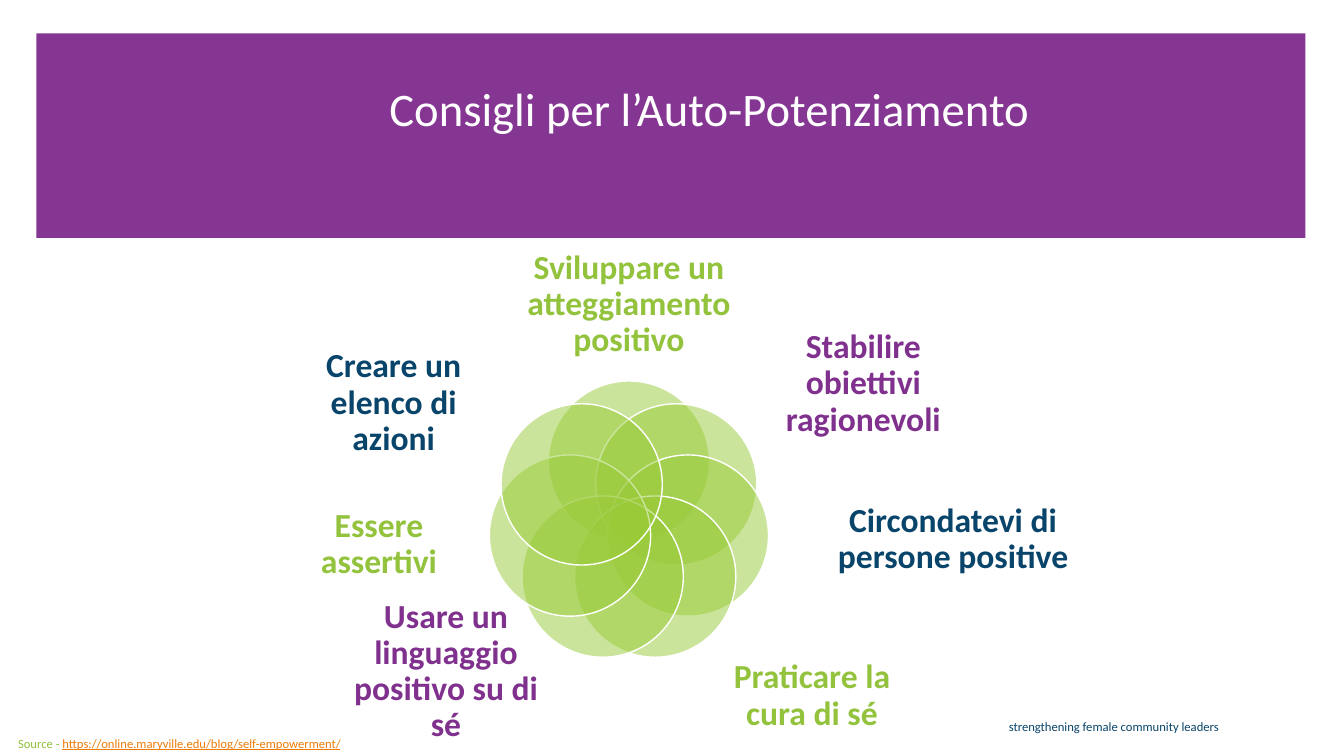
"""Build the self-empowerment tips slide with its seven-petal diagram."""
from dataclasses import dataclass
from math import cos, pi, sin

from lxml.etree import SubElement
from pptx import Presentation
from pptx.dml.color import RGBColor
from pptx.enum.shapes import MSO_SHAPE
from pptx.enum.text import MSO_ANCHOR, PP_ALIGN
from pptx.oxml.ns import qn
from pptx.shapes.autoshape import Shape
from pptx.slide import Slide
from pptx.util import Pt


@dataclass(frozen=True)
class Theme:
    """Colours, font and type sizes."""
    font: str = "Calibri"
    white: str = "FFFFFF"
    banner: str = "853693"
    petal: str = "99CB38"
    green: str = "93C23D"
    purple: str = "80318E"
    navy: str = "09446A"
    link: str = "EE7B08"
    title: float = 33.3
    label: float = 24
    small: float = 9


@dataclass(frozen=True)
class Box:
    """Position and size in points."""
    x: float
    y: float
    w: float
    h: float


@dataclass(frozen=True)
class Run:
    """Text with one look."""
    text: str
    color: str
    size: float
    bold: bool = False
    underline: bool = False


@dataclass(frozen=True)
class Tip:
    """Label next to one petal."""
    text: str
    color: str
    box: Box
    lift: float = 0


T = Theme()
CENTER_X, CENTER_Y, RING, PETAL = 449.28, 372.96, 43.2, 115.2

TIPS = [
    Tip("Sviluppare un atteggiamento positivo", T.green, Box(349.9, 187.9, 198.7, 59)),
    Tip("Stabilire obiettivi ragionevoli", T.purple, Box(554.4, 235.4, 124.6, 77.8)),
    Tip("Circondatevi di persone positive", T.navy, Box(575.3, 344.2, 211, 82.8)),
    Tip("Praticare la cura di sé", T.green, Box(514.1, 459.4, 131.8, 75.6)),
    Tip("Usare un linguaggio positivo su di sé", T.purple, Box(252.7, 459.4, 131.8, 75.6), 35),
    Tip("Essere assertivi", T.green, Box(209.5, 347.8, 122.4, 82.8)),
    Tip("Creare un elenco di azioni", T.navy, Box(218.9, 249.1, 124.6, 77.8)),
]


def add_filled(s: Slide, kind: MSO_SHAPE, box: Box, color: str) -> Shape:
    """Add a flat shape without outline."""
    sp = s.shapes.add_shape(kind, Pt(box.x), Pt(box.y), Pt(box.w), Pt(box.h))
    sp.shadow.inherit = False
    sp.fill.solid()
    sp.fill.fore_color.rgb = RGBColor.from_string(color)
    sp.line.fill.background()
    return sp


def add_petal(s: Slide, angle: float) -> None:
    """Add a half-transparent circle on the ring, clockwise from the top."""
    x = CENTER_X + RING * sin(angle) - PETAL / 2
    y = CENTER_Y - RING * cos(angle) - PETAL / 2
    sp = add_filled(s, MSO_SHAPE.OVAL, Box(x, y, PETAL, PETAL), T.petal)
    clr = sp.fill._xPr.find(qn("a:solidFill"))[0]
    SubElement(clr, qn("a:alpha"), val="50000")
    sp.line.color.rgb = RGBColor.from_string(T.white)
    sp.line.width = Pt(1)


def add_text(s: Slide, box: Box, runs: list[Run], align: PP_ALIGN, spacing: float = 1) -> Shape:
    """Add a wrapped one-paragraph text box."""
    sp = s.shapes.add_textbox(Pt(box.x), Pt(box.y), Pt(box.w), Pt(box.h))
    tf = sp.text_frame
    tf.word_wrap = True
    p = tf.paragraphs[0]
    p.alignment = align
    p.line_spacing = spacing
    for run in runs:
        r = p.add_run()
        r.text = run.text
        r.font.name = T.font
        r.font.size = Pt(run.size)
        r.font.bold = run.bold
        r.font.underline = run.underline
        r.font.color.rgb = RGBColor.from_string(run.color)
    return sp


def add_tip(s: Slide, tip: Tip) -> None:
    """Add a centred bold label without margins."""
    run = Run(tip.text, tip.color, T.label, bold=True)
    tf = add_text(s, tip.box, [run], PP_ALIGN.CENTER, 0.9).text_frame
    tf.vertical_anchor = MSO_ANCHOR.MIDDLE
    tf.margin_left = tf.margin_right = tf.margin_top = Pt(0)
    tf.margin_bottom = Pt(tip.lift)


def main() -> None:
    """Build and save the slide."""
    prs = Presentation()
    prs.slide_width, prs.slide_height = Pt(960), Pt(540)
    s = prs.slides.add_slide(prs.slide_layouts[6])
    add_filled(s, MSO_SHAPE.RECTANGLE, Box(26, 23.8, 906.5, 146.2), T.banner)
    add_text(s, Box(100, 509.8, 777.6, 18),
             [Run("strengthening female community leaders", T.navy, T.small)], PP_ALIGN.RIGHT)
    add_text(s, Box(270.7, 58.3, 472.3, 67.7),
             [Run("Consigli per l’Auto-Potenziamento", T.white, T.title)], PP_ALIGN.CENTER, 0.9)
    for i, tip in enumerate(TIPS):
        add_petal(s, 2 * pi * i / len(TIPS))
        add_tip(s, tip)
    add_text(s, Box(5.8, 522, 317.5, 18), [
        Run("Source - ", T.green, T.small),
        Run("https://online.maryville.edu/blog/self-empowerment/", T.link, T.small, underline=True),
    ], PP_ALIGN.LEFT)
    prs.save("out.pptx")


if __name__ == "__main__":
    main()
